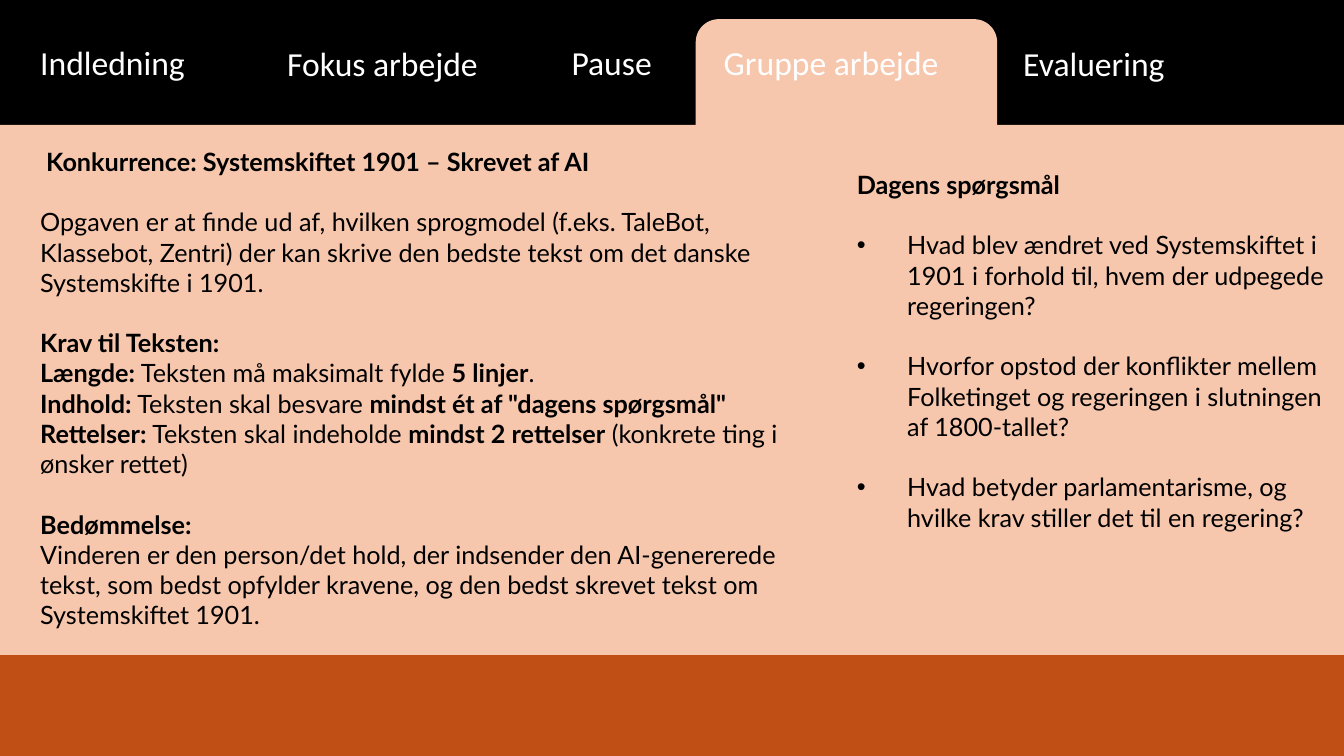
import pptx
import pptx.util
import pptx.dml.color
import pptx.enum.shapes
import pptx.enum.text
import lxml.etree
from dataclasses import dataclass

WIDE, HIGH = 13.33, 7.5


@dataclass(frozen=True)
class Theme:
    back: str = "000000"
    panel: str = "F6C6AD"
    foot: str = "C04F15"
    light: str = "FFFFFF"
    dark: str = "000000"
    head: str = "Calibri"
    body: str = "Lato"
    large: int = 24
    small: int = 18
    gap: float = 21.6


LOOK = Theme()

TABS = [
    ("Indledning", 0.3, 0.37, 2.15),
    ("Fokus arbejde", 2.75, 0.38, 2.52),
    ("Pause", 5.57, 0.37, 1.21),
    ("Gruppe arbejde", 7.08, 0.37, 2.67),
    ("Evaluering", 10.05, 0.38, 2.15),
]

TASK = [
    ["*Konkurrence: Systemskiftet 1901 – Skrevet af AI*"],
    ["Opgaven er at finde ud af, hvilken sprogmodel (f.eks. TaleBot, Klassebot, "
     "Zentri) der kan skrive den bedste tekst om det danske Systemskifte i 1901."],
    ["*Krav til Teksten:*",
     "*Længde:* Teksten må maksimalt fylde *5 linjer*.",
     "*Indhold:* Teksten skal besvare *mindst ét af \"dagens spørgsmål\"*",
     "*Rettelser:* Teksten skal indeholde *mindst 2 rettelser* "
     "(konkrete ting i ønsker rettet)"],
    ["*Bedømmelse:*",
     "Vinderen er den person/det hold, der indsender den AI-genererede tekst, "
     "som bedst opfylder kravene, og den bedst skrevet tekst om Systemskiftet 1901."],
]

ASK = [
    ["*Dagens spørgsmål*"],
    ["Hvad blev ændret ved Systemskiftet i 1901 i forhold til, "
     "hvem der udpegede regeringen?"],
    ["Hvorfor opstod der konflikter mellem Folketinget og regeringen "
     "i slutningen af 1800-tallet?"],
    ["Hvad betyder parlamentarisme, og hvilke krav stiller det til en regering?"],
]

inch = pptx.util.Inches
shapes = pptx.enum.shapes.MSO_SHAPE


def tint(code):
    return pptx.dml.color.RGBColor.from_string(code)


def block(page, kind, box, code):
    part = page.shapes.add_shape(kind, *map(inch, box))
    part.shadow.inherit = False
    part.fill.solid()
    part.fill.fore_color.rgb = tint(code)
    part.line.fill.background()


def frame(page, box):
    text = page.shapes.add_textbox(*map(inch, box)).text_frame
    text.word_wrap = True
    text.auto_size = pptx.enum.text.MSO_AUTO_SIZE.SHAPE_TO_FIT_TEXT
    return text


def style(para, name, size, code):
    para.font.name = name
    para.font.size = pptx.util.Pt(size)
    para.font.color.rgb = tint(code)


def indent(para, left, first, mark=None):
    props = para._p.get_or_add_pPr()
    props.set("marL", str(inch(left)))
    props.set("indent", str(inch(first)))
    if mark:
        space = props.nsmap["a"]
        font = lxml.etree.SubElement(props, f"{{{space}}}buFont")
        font.set("typeface", "Arial")
        sign = lxml.etree.SubElement(props, f"{{{space}}}buChar")
        sign.set("char", mark)


def prose(page, box, groups, lead=0, mark=None):
    text = frame(page, box)
    for row, group in enumerate(groups):
        for col, line in enumerate(group):
            first = row == col == 0
            para = text.paragraphs[0] if first else text.add_paragraph()
            if first and lead:
                indent(para, 0, lead)
            elif row and mark:
                indent(para, 0.5, -0.5, mark)
            if row and not col:
                para.space_before = pptx.util.Pt(LOOK.gap)
            style(para, LOOK.body, LOOK.small, LOOK.dark)
            for turn, piece in enumerate(line.split("*")):
                if piece:
                    run = para.add_run()
                    run.text = piece
                    run.font.bold = turn % 2 == 1


def main():
    deck = pptx.Presentation()
    deck.slide_width, deck.slide_height = inch(WIDE), inch(HIGH)
    page = deck.slides.add_slide(deck.slide_layouts[6])
    page.background.fill.solid()
    page.background.fill.fore_color.rgb = tint(LOOK.back)

    block(page, shapes.ROUNDED_RECTANGLE, (6.9, 0.19, 2.99, 1.37), LOOK.panel)
    block(page, shapes.RECTANGLE, (0, 1.24, WIDE, HIGH - 1.24), LOOK.panel)
    for name, left, top, width in TABS:
        para = frame(page, (left, top, width, 0.5)).paragraphs[0]
        para.text = name
        style(para, LOOK.head, LOOK.large, LOOK.light)
    block(page, shapes.RECTANGLE, (0, 6.5, WIDE, HIGH - 6.5), LOOK.foot)
    prose(page, (0.3, 1.4, 7.95, 4.95), TASK, lead=0.06)
    prose(page, (8.4, 1.63, 4.93, 3.74), ASK, mark="•")
    deck.save("out.pptx")


if __name__ == "__main__":
    main()
